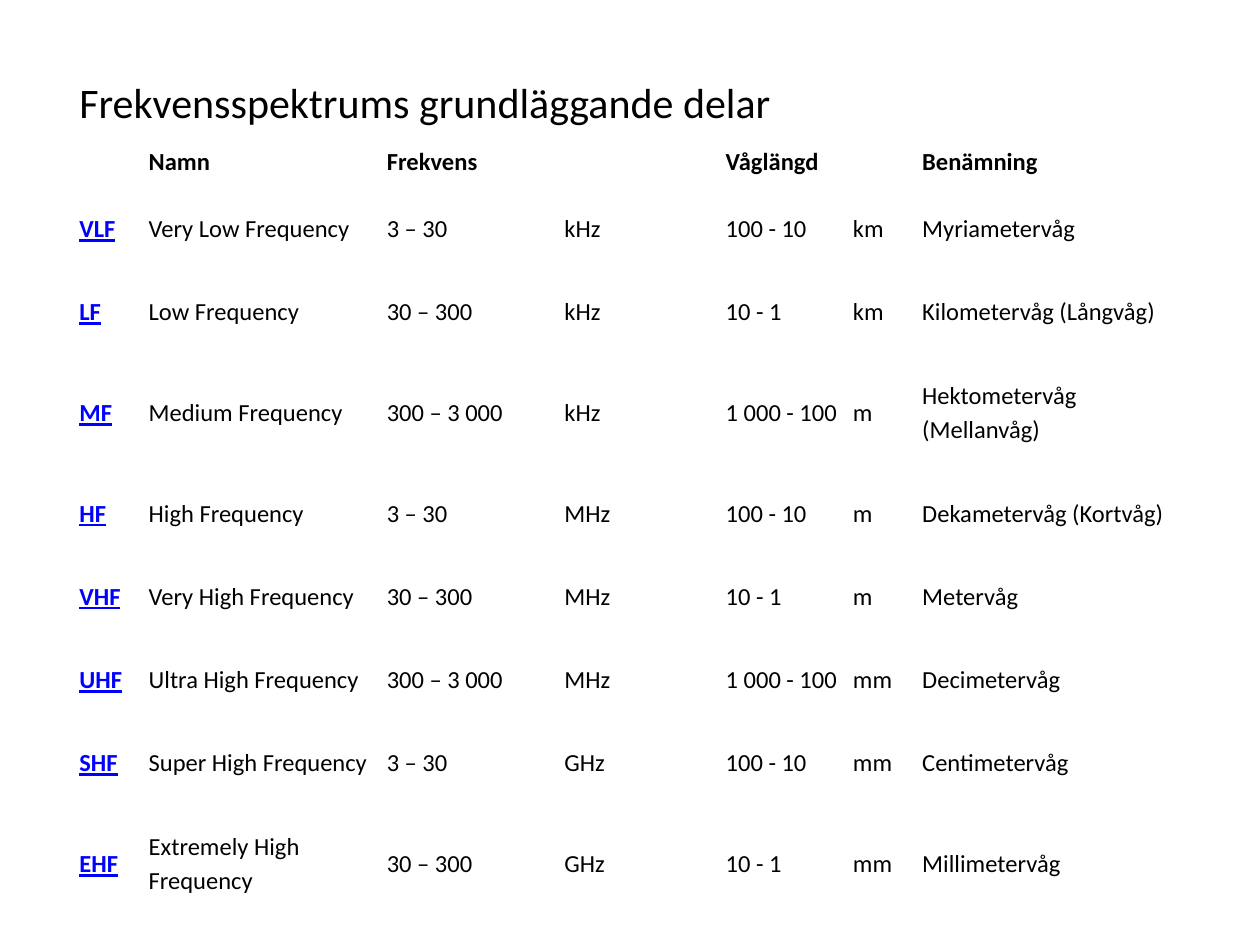
import dataclasses

import pptx
import pptx.dml.color
import pptx.enum.text
import pptx.util

Inches = pptx.util.Inches


@dataclasses.dataclass(frozen=True)
class Theme:
    font: str = "Calibri"
    ink: str = "000000"
    link: str = "0000FF"
    title: int = 24
    body: int = 14
    inset: float = 0.04
    gap: int = 10
    lead: float = 1.15


THEME = Theme()
LEFT, TOP = 0.59, 0.52
COLS = [0.55, 1.89, 1.41, 1.28, 1.01, 0.55, 2.28]
LOW, HIGH = 0.66, 0.94
ROWS = [0.53, 0.38, LOW, LOW, HIGH, LOW, LOW, LOW, LOW, HIGH]

TITLE = "Frekvensspektrums grundläggande delar"
HEADS = {1: "Namn", 2: "Frekvens", 4: "Våglängd", 6: "Benämning"}
BANDS = [
    ("VLF", "Very Low Frequency", "3 – 30", "kHz", "100 - 10", "km", "Myriametervåg"),
    ("LF", "Low Frequency", "30 – 300", "kHz", "10 - 1", "km", "Kilometervåg (Långvåg)"),
    ("MF", "Medium Frequency", "300 – 3 000", "kHz", "1 000 - 100", "m", "Hektometervåg (Mellanvåg)"),
    ("HF", "High Frequency", "3 – 30", "MHz", "100 - 10", "m", "Dekametervåg (Kortvåg)"),
    ("VHF", "Very High Frequency", "30 – 300", "MHz", "10 - 1", "m", "Metervåg"),
    ("UHF", "Ultra High Frequency", "300 – 3 000", "MHz", "1 000 - 100", "mm", "Decimetervåg"),
    ("SHF", "Super High Frequency", "3 – 30", "GHz", "100 - 10", "mm", "Centimetervåg"),
    ("EHF", "Extremely High Frequency", "30 – 300", "GHz", "10 - 1", "mm", "Millimetervåg"),
]


def add_grid(slide):
    frame = slide.shapes.add_table(
        len(ROWS), len(COLS), Inches(LEFT), Inches(TOP),
        Inches(sum(COLS)), Inches(sum(ROWS)))
    table = frame.table
    table.first_row = False
    table.horz_banding = False
    for col, width in zip(table.columns, COLS):
        col.width = Inches(width)
    for row, height in zip(table.rows, ROWS):
        row.height = Inches(height)
    for cell in table.iter_cells():
        cell.fill.background()
    return table


def merge(table, row, first, last):
    table.cell(row, first).merge(table.cell(row, last))


def write(cell, text, size=THEME.body, color=THEME.ink, bold=False, line=False):
    inset = Inches(THEME.inset)
    cell.margin_left = cell.margin_right = inset
    cell.margin_top = cell.margin_bottom = inset
    cell.vertical_anchor = pptx.enum.text.MSO_ANCHOR.MIDDLE
    cell.text_frame.text = text
    para = cell.text_frame.paragraphs[0]
    para.line_spacing = THEME.lead
    para.space_after = pptx.util.Pt(THEME.gap)
    font = para.runs[0].font
    font.name = THEME.font
    font.size = pptx.util.Pt(size)
    font.bold = bold
    font.underline = line
    font.color.rgb = pptx.dml.color.RGBColor.from_string(color)


def add_heads(table):
    merge(table, 0, 0, len(COLS) - 1)
    write(table.cell(0, 0), TITLE, size=THEME.title)
    merge(table, 1, 2, 3)
    merge(table, 1, 4, 5)
    for col, text in HEADS.items():
        write(table.cell(1, col), text, bold=True)


def add_bands(table):
    for row, (code, *facts) in enumerate(BANDS, start=2):
        write(table.cell(row, 0), code, color=THEME.link, bold=True, line=True)
        for col, text in enumerate(facts, start=1):
            write(table.cell(row, col), text)


def main():
    deck = pptx.Presentation()
    deck.slide_width = Inches(10)
    deck.slide_height = Inches(7.5)
    slide = deck.slides.add_slide(deck.slide_layouts[6])
    table = add_grid(slide)
    add_heads(table)
    add_bands(table)
    deck.save("out.pptx")


if __name__ == "__main__":
    main()
